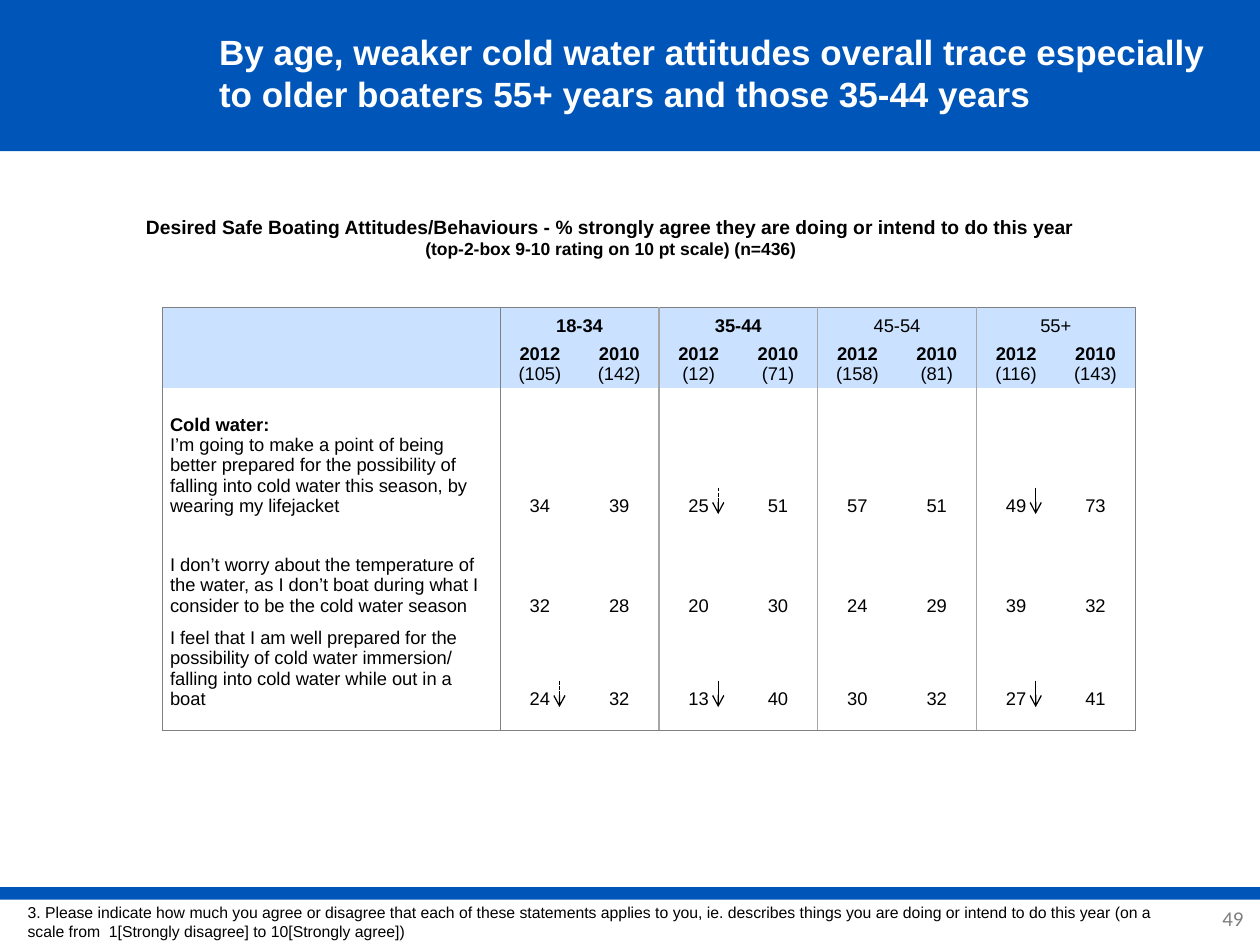
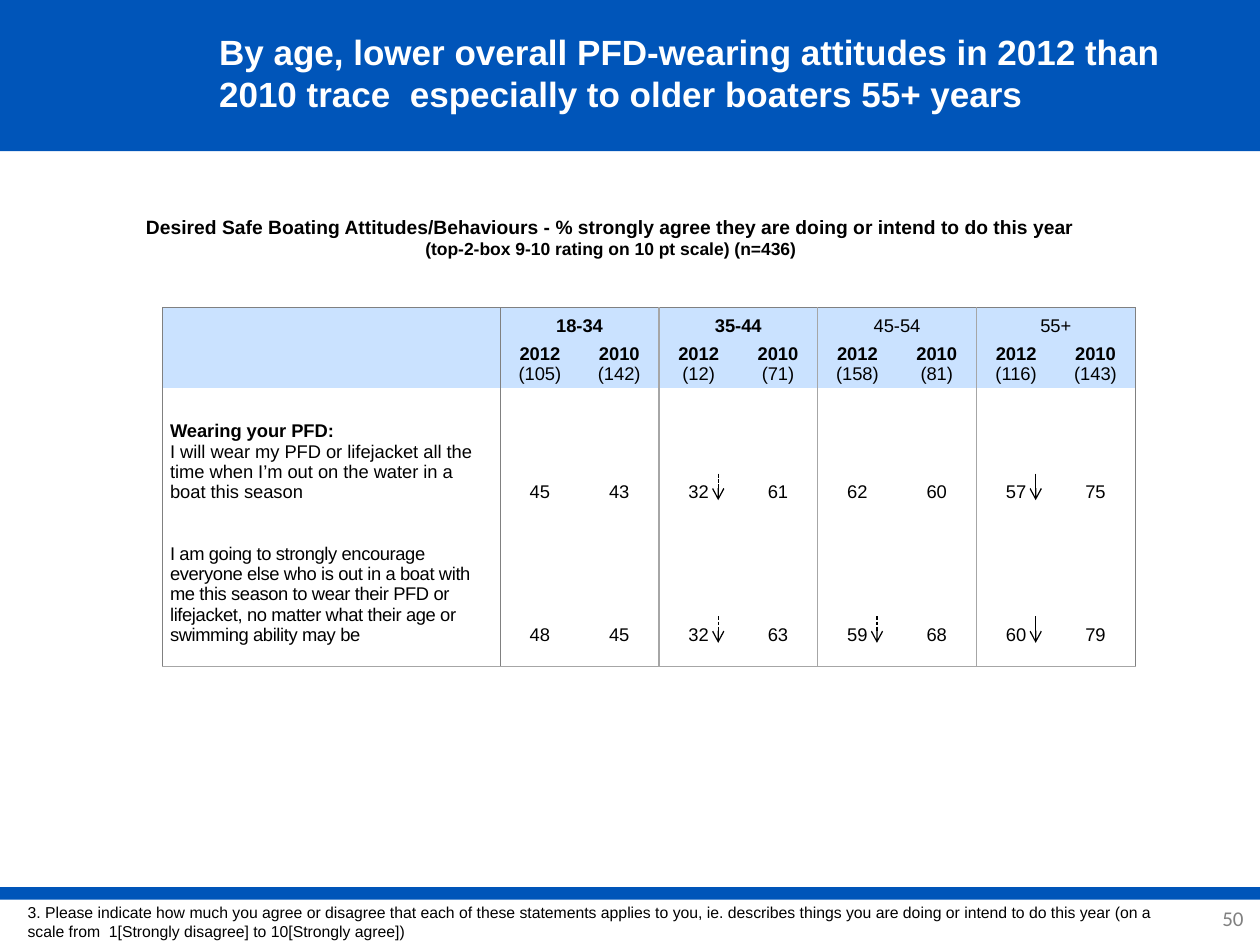
from collections import namedtuple

from lxml import etree
from pptx import Presentation
from pptx import util as u
from pptx.dml import color as dml
from pptx.enum import dml as line_kinds
from pptx.enum import shapes, text
from pptx.oxml import ns

COLOURS = {
    "band": "0055B9",
    "header": "CAE2FF",
    "frame": "808080",
    "divider": "A6A6A6",
    "ink": "000000",
    "paper": "FFFFFF",
}
COLUMNS, ROWS = 100, 75
SLIDE_WIDTH, SLIDE_HEIGHT = u.Inches(10), u.Inches(7.5)
Box = namedtuple("Box", "left top width height")

HEADER_BAND = Box(0, 0, COLUMNS, 12)
FOOTER = Box(0, 70.4, COLUMNS, 4.6)
HEADING_BOX = Box(7, 16.6, 82.9, 5.2)
TABLE_LEFT, TABLE_TOP = 12.9, 24.4
LABEL_WIDTH, VALUE_WIDTH = 26.8, 6.3
HEADER_HEIGHTS = [2.9, 3.3]
LAST_ROW_GAP = 1.68
ARROW_OFFSET, ARROW_LENGTH = 4.7, 2.1

HEADING = [
    ("Desired Safe Boating Attitudes/Behaviours - % strongly agree they are doing or intend to do this year", {}),
    ("(top-2-box 9-10 rating on 10 pt scale) (n=436)", {"size": 10}),
]
FOOTNOTE = (
    "3. Please indicate how much you agree or disagree that each of these statements applies to you, "
    "ie. describes things you are doing or intend to do this year (on a scale from  "
    "1[Strongly disagree] to 10[Strongly agree])"
)
AGE_GROUPS = [("18-34", True), ("35-44", True), ("45-54", False), ("55+", False)]
SAMPLE_SIZES = [105, 142, 12, 71, 158, 81, 116, 143]

PAGES = [
    {
        "number": 49,
        "title": "By age, weaker cold water attitudes overall trace especially to older boaters 55+ years and those 35-44 years",
        "bottom": ("frame", 0.5),
        "statements": [
            {
                "height": 10.2,
                "topic": "Cold water:",
                "label": "I’m going to make a point of being better prepared for the possibility of falling into cold water this season, by wearing my lifejacket",
                "values": [34, 39, 25, 51, 57, 51, 49, 73],
                "drops": {3: "dashed", 7: "solid"},
            },
            {
                "height": 7.9,
                "label": "I don’t worry about the temperature of the water, as I don’t boat during what I consider to be the cold water season",
                "values": [32, 28, 20, 30, 24, 29, 39, 32],
            },
            {
                "height": 9.1,
                "label": "I feel that I am well prepared for the possibility of cold water immersion/ falling into cold water while out in a boat",
                "values": [24, 32, 13, 40, 30, 32, 27, 41],
                "drops": {1: "dashed", 3: "solid", 7: "solid"},
            },
        ],
    },
    {
        "number": 50,
        "title": "By age, lower overall PFD-wearing attitudes in 2012 than 2010 trace  especially to older boaters 55+ years",
        "bottom": ("divider", 1),
        "statements": [
            {
                "height": 9.1,
                "topic": "Wearing your PFD:",
                "label": "I will wear my PFD or lifejacket all the time when I’m out on the water in a boat this season",
                "values": [45, 43, 32, 61, 62, 60, 57, 75],
                "drops": {3: "dashed", 7: "solid"},
            },
            {
                "height": 13,
                "label": "I am going to strongly encourage everyone else who is out in a boat with me this season to wear their PFD or lifejacket, no matter what their age or swimming ability may be",
                "spacing": -0.2,
                "values": [48, 45, 32, 63, 59, 68, 60, 79],
                "drops": {3: "dashed", 5: "dashed", 7: "solid"},
            },
        ],
    },
]


def across(columns):
    """Turn grid columns into a length."""
    return round(SLIDE_WIDTH * columns / COLUMNS)


def down(rows):
    """Turn grid rows into a length."""
    return round(SLIDE_HEIGHT * rows / ROWS)


def place(box):
    """Turn a grid box into left, top, width and height."""
    return across(box.left), down(box.top), across(box.width), down(box.height)


def rgb(name):
    """Look up a colour by name."""
    return dml.RGBColor.from_string(COLOURS[name])


def put_text(frame, spans, size=10.5, font="Arial", colour="ink", bold=False, align="LEFT", spacing=0):
    """Write spans into one paragraph, each on its own line."""
    para = frame.paragraphs[0]
    para.alignment = getattr(text.PP_ALIGN, align)
    spans = [(spans, {})] if isinstance(spans, str) else spans
    for index, (words, changes) in enumerate(spans):
        if index:
            para.add_line_break()
        span = para.add_run()
        span.text = words
        span.font.name = font
        span.font.size = u.Pt(changes.get("size", size))
        span.font.bold = changes.get("bold", bold)
        span.font.color.rgb = rgb(colour)
        if spacing:
            span.font._element.set("spc", str(round(spacing * 100)))
    if not spans:
        etree.SubElement(para._p, ns.qn("a:endParaRPr"), sz=str(round(size * 100)))


def add_text(page, box, spans, anchor="MIDDLE", margins=(1, 0.5, 1, 0.5), **style):
    """Add a wrapped text box."""
    frame = page.shapes.add_textbox(*place(box)).text_frame
    frame.word_wrap = True
    frame.vertical_anchor = getattr(text.MSO_ANCHOR, anchor)
    frame.margin_left, frame.margin_top, frame.margin_right, frame.margin_bottom = map(across, margins)
    put_text(frame, spans, **style)


def add_band(page, box):
    """Add a plain blue band."""
    band = page.shapes.add_shape(shapes.MSO_SHAPE.RECTANGLE, *place(box))
    band.shadow.inherit = False
    band.fill.solid()
    band.fill.fore_color.rgb = rgb("band")
    band.line.fill.background()


def add_header(page, box, title):
    """Add the title on its blue band."""
    add_band(page, box)
    title_box = Box(box.left + 16.4, box.top, box.width - 19.1, box.height - 0.5)
    add_text(page, title_box, title, size=20, bold=True, colour="paper")


def add_footer(page, box, number):
    """Add the thin band, the footnote and the page number."""
    add_band(page, Box(box.left, box.top, box.width, 1))
    number_box = Box(box.left + 93.6, box.top + 0.5, 6.3, 4)
    add_text(page, number_box, str(number), margins=(0.4, 0.4, 1.2, 0.4),
             size=12, font="Calibri", colour="frame", align="RIGHT")
    add_text(page, Box(box.left + 1.2, box.top + 0.9, 91.2, 3.7), FOOTNOTE, size=9)


def column_edge(boundary):
    """Give colour and width of the vertical rule at a column boundary."""
    if boundary in (0, 1, 1 + len(SAMPLE_SIZES)):
        return "frame", 0.5
    return ("divider", 1) if boundary % 2 else None


def set_border(cell, side, edge):
    """Draw or clear one side of a cell."""
    line = etree.SubElement(cell._tc.get_or_add_tcPr(), ns.qn("a:ln" + side))
    if edge is None:
        etree.SubElement(line, ns.qn("a:noFill"))
        return
    name, width = edge
    line.set("w", str(u.Pt(width)))
    fill = etree.SubElement(line, ns.qn("a:solidFill"))
    etree.SubElement(fill, ns.qn("a:srgbClr"), val=COLOURS[name])


def style_cell(cell, row, column, last_row, bottom):
    """Set the borders, fill and margins of a cell."""
    right = column + (2 if cell.is_merge_origin else 1)
    set_border(cell, "L", column_edge(column))
    set_border(cell, "R", column_edge(right))
    set_border(cell, "T", ("frame", 0.5) if row == 0 else None)
    set_border(cell, "B", bottom if row == last_row else None)
    if row < len(HEADER_HEIGHTS):
        cell.fill.solid()
        cell.fill.fore_color.rgb = rgb("header")
    else:
        cell.fill.background()
    cell.margin_left = cell.margin_right = 0 if column else across(0.6)
    cell.margin_top = 0
    cell.margin_bottom = down(LAST_ROW_GAP) if row == last_row else 0
    anchors = [text.MSO_ANCHOR.MIDDLE, text.MSO_ANCHOR.TOP]
    cell.vertical_anchor = anchors[row] if row < len(anchors) else text.MSO_ANCHOR.BOTTOM


def fill_headings(table):
    """Write the age groups, the years and the sample sizes."""
    for row in range(len(HEADER_HEIGHTS)):
        put_text(table.cell(row, 0).text_frame, [])
    for group, (ages, bold) in enumerate(AGE_GROUPS):
        column = 1 + 2 * group
        table.cell(0, column).merge(table.cell(0, column + 1))
        put_text(table.cell(0, column).text_frame, ages, bold=bold, align="CENTER")
        put_text(table.cell(0, column + 1).text_frame, [])
    for column, count in enumerate(SAMPLE_SIZES, 1):
        year = "2012" if column % 2 else "2010"
        spans = [(year, {"bold": True}), (f"({count})", {})]
        put_text(table.cell(1, column).text_frame, spans, align="CENTER")


def add_ratings(page, left, top, statements, bottom):
    """Add the table of ratings and the arrows that mark drops."""
    heights = HEADER_HEIGHTS + [statement["height"] for statement in statements]
    widths = [LABEL_WIDTH] + [VALUE_WIDTH] * len(SAMPLE_SIZES)
    box = Box(left, top, sum(widths), sum(heights))
    table = page.shapes.add_table(len(heights), len(widths), *place(box)).table
    table.first_row = table.horz_banding = False
    for column, width in zip(table.columns, widths):
        column.width = across(width)
    for row, height in zip(table.rows, heights):
        row.height = down(height)
    fill_headings(table)
    last_row = len(heights) - 1
    for row, statement in enumerate(statements, len(HEADER_HEIGHTS)):
        topic = [(statement["topic"], {"bold": True})] if "topic" in statement else []
        put_text(table.cell(row, 0).text_frame, topic + [(statement["label"], {})],
                 spacing=statement.get("spacing", 0))
        for column, value in enumerate(statement["values"], 1):
            put_text(table.cell(row, column).text_frame, str(value), align="CENTER")
        text_bottom = top + sum(heights[:row + 1]) - (LAST_ROW_GAP if row == last_row else 0)
        for column, dash in statement.get("drops", {}).items():
            add_drop(page, left + sum(widths[:column]) + ARROW_OFFSET, text_bottom, dash)
    for row in range(len(heights)):
        for column in range(len(widths)):
            style_cell(table.cell(row, column), row, column, last_row, bottom)


def add_drop(page, column, row, dash):
    """Add a downward arrow that ends at the given grid point."""
    arrow = page.shapes.add_connector(
        shapes.MSO_CONNECTOR.STRAIGHT,
        across(column), down(row - ARROW_LENGTH), across(column), down(row))
    arrow.line.color.rgb = rgb("ink")
    arrow.line.width = u.Pt(0.75)
    if dash == "dashed":
        arrow.line.dash_style = line_kinds.MSO_LINE.SQUARE_DOT
    etree.SubElement(arrow.line._get_or_add_ln(), ns.qn("a:tailEnd"), type="arrow")
    etree.SubElement(arrow._element.spPr, ns.qn("a:effectLst"))


def add_page(deck, content):
    """Add one slide of ratings by age."""
    page = deck.slides.add_slide(deck.slide_layouts[6])
    add_header(page, HEADER_BAND, content["title"])
    add_footer(page, FOOTER, content["number"])
    add_text(page, HEADING_BOX, HEADING, anchor="TOP", size=11, bold=True, align="CENTER")
    add_ratings(page, TABLE_LEFT, TABLE_TOP, content["statements"], content["bottom"])


def main():
    """Build and save the deck."""
    deck = Presentation()
    deck.slide_width, deck.slide_height = SLIDE_WIDTH, SLIDE_HEIGHT
    for content in PAGES:
        add_page(deck, content)
    deck.save("out.pptx")


if __name__ == "__main__":
    main()
